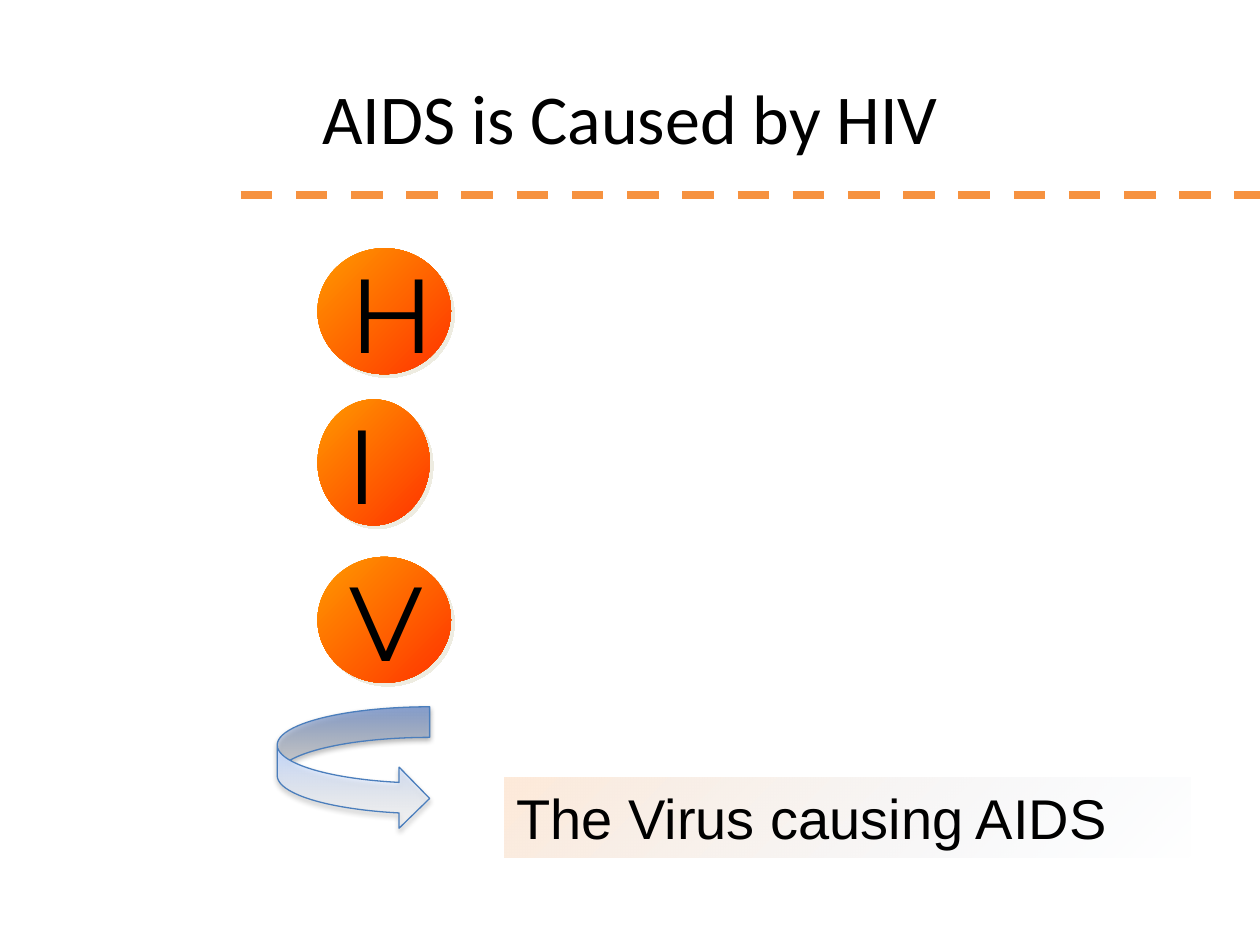
from lxml import etree
from pptx import Presentation
from pptx.dml.color import RGBColor
from pptx.enum.dml import MSO_LINE_DASH_STYLE as DASH
from pptx.enum.shapes import MSO_CONNECTOR as LINK, MSO_SHAPE as SHAPE
from pptx.enum.text import MSO_ANCHOR as ANCHOR, MSO_AUTO_SIZE as AUTOSIZE, PP_ALIGN as ALIGN
from pptx.oxml import parse_xml
from pptx.oxml.ns import nsdecls, qn
from pptx.util import Inches, Pt

COLORS = {
    "text": "000000", "rule": "F69240", "outline": "4B7EBC",
    "orange": "FF9900", "red": "FF3300", "ball_shadow": "EEECE1",
    "peach": "FDEADA", "mist": "E5ECF5", "white": "FFFFFF",
    "sky": "A4C4FF", "black": "000000",
}
COLUMNS, ROWS = 100, 75


class SlideBuilder:
    def __init__(self, deck):
        self.page = deck.slides.add_slide(deck.slide_layouts[5])
        self.column = deck.slide_width / COLUMNS
        self.row = deck.slide_height / ROWS

    def place(self, left, top, width, height):
        return [round(size * unit) for size, unit in
                zip((left, top, width, height), (self.column, self.row) * 2)]

    def color(self, name):
        return RGBColor.from_string(COLORS[name])

    def color_xml(self, name, opacity):
        return (f'<a:srgbClr val="{COLORS[name]}">'
                f'<a:alpha val="{opacity * 1000}"/></a:srgbClr>')

    def set_text(self, shape, text, font, size, align=ALIGN.LEFT, anchor=ANCHOR.MIDDLE):
        frame = shape.text_frame
        frame.text = text
        frame.vertical_anchor = anchor
        para = frame.paragraphs[0]
        para.alignment = align
        span = para.runs[0]
        span.font.name, span.font.size = font, Pt(size)
        span.font.color.rgb = self.color("text")
        return frame

    def gradient(self, shape, start, end, angle):
        stops = "".join(f'<a:gs pos="{spot}">{self.color_xml(*stop)}</a:gs>'
                        for spot, stop in ((0, start), (100000, end)))
        fill = parse_xml(f'<a:gradFill {nsdecls("a")} rotWithShape="1"><a:gsLst>{stops}</a:gsLst>'
                         f'<a:lin ang="{angle * 60000}" scaled="0"/></a:gradFill>')
        shape.element.spPr.find(qn("a:prstGeom")).addnext(fill)

    def shadow(self, shape, name, opacity, blur, distance, angle):
        effects = shape.element.spPr.find(qn("a:effectLst"))
        effects.append(parse_xml(
            f'<a:outerShdw {nsdecls("a")} blurRad="{Pt(blur)}" dist="{Pt(distance)}" '
            f'dir="{angle * 60000}" algn="ctr" rotWithShape="0">'
            f'{self.color_xml(name, opacity)}</a:outerShdw>'))

    def shape(self, kind, area, start, end, angle):
        shape = self.page.shapes.add_shape(kind, *self.place(*area))
        shape.shadow.inherit = False
        shape.line.fill.background()
        self.gradient(shape, start, end, angle)
        return shape

    def title(self, text, area):
        title = self.page.shapes.title
        title.left, title.top, title.width, title.height = self.place(*area)
        self.set_text(title, text, "Calibri", 40, ALIGN.CENTER)

    def ball(self, letter, area):
        ball = self.shape(SHAPE.OVAL, area, ("orange", 100), ("red", 100), 45)
        self.shadow(ball, "ball_shadow", 100, 0, 2.8, 45)
        self.set_text(ball, letter, "Montserrat", 60).word_wrap = False

    def caption(self, text, area):
        box = self.shape(SHAPE.RECTANGLE, area, ("peach", 100), ("mist", 0), 45)
        frame = self.set_text(box, text, "Arial", 32, anchor=ANCHOR.TOP)
        frame.word_wrap = True
        frame.auto_size = AUTOSIZE.SHAPE_TO_FIT_TEXT

    def rule(self, left, right, top):
        x1, y, x2, _ = self.place(left, top, right, top)
        rule = self.page.shapes.add_connector(LINK.STRAIGHT, x1, y, x2, y)
        rule.line.color.rgb = self.color("rule")
        rule.line.width = Pt(4.5)
        rule.line.dash_style = DASH.DASH
        etree.SubElement(rule._element.spPr, qn("a:effectLst"))

    def curved_arrow(self, area):
        arrow = self.shape(SHAPE.CURVED_RIGHT_ARROW, area, ("white", 10), ("sky", 100), 270)
        arrow.line.color.rgb = self.color("outline")
        arrow.line.width = Pt(0.75)
        self.shadow(arrow, "black", 35, 3.1, 1.8, 90)


def main():
    deck = Presentation()
    deck.slide_width, deck.slide_height = Inches(10), Inches(7.5)
    slide = SlideBuilder(deck)
    slide.title("AIDS is Caused by HIV", (5, 3, 90, 12.5))
    for letter, top, width in (("H", 19.7, 10.6), ("I", 31.7, 8.9), ("V", 44.2, 10.6)):
        slide.ball(letter, (25.2, top, width, 10))
    slide.caption("The Virus causing AIDS", (40, 61.7, 54.5, 6.4))
    slide.rule(19.1, COLUMNS, 15.5)
    slide.curved_arrow((22, 56.1, 12.1, 9.7))
    deck.save("out.pptx")


if __name__ == "__main__":
    main()
